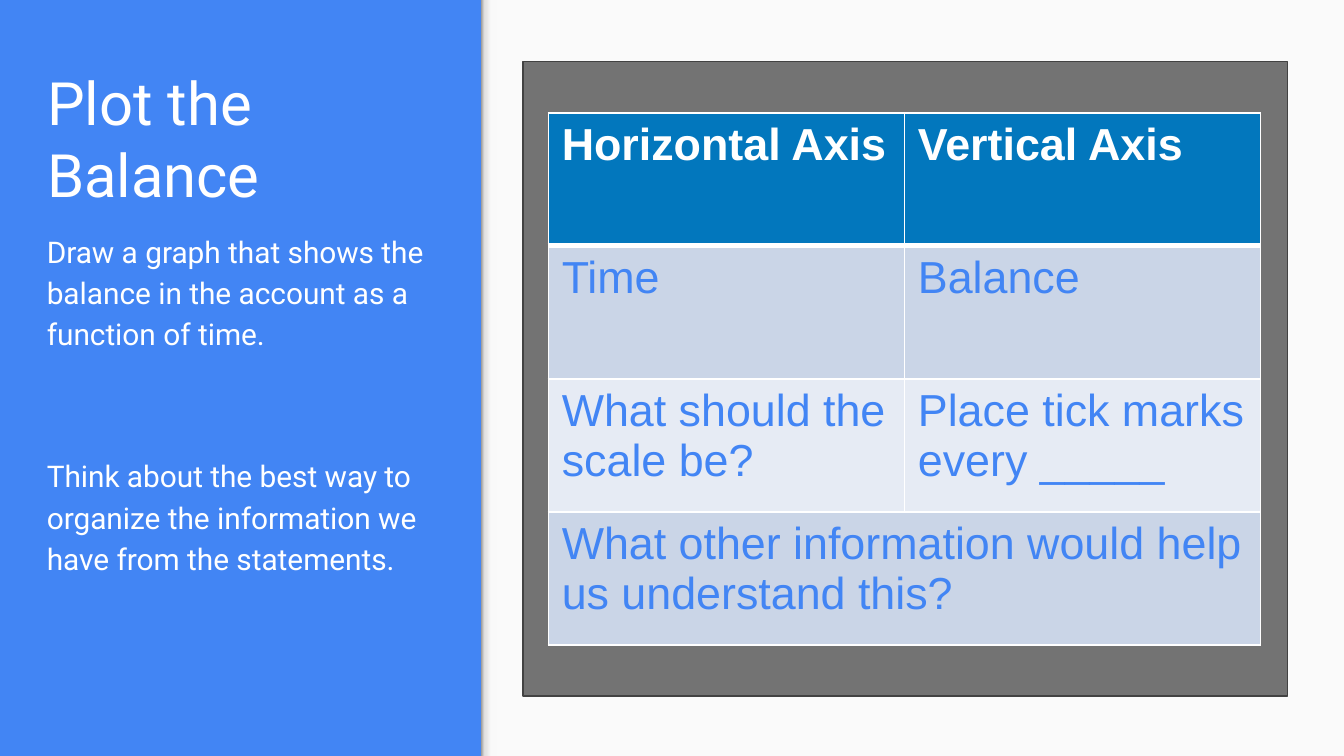
from copy import deepcopy
from lxml.etree import SubElement
from pptx import Presentation
from pptx.dml.color import RGBColor
from pptx.enum.shapes import MSO_SHAPE
from pptx.enum.text import MSO_ANCHOR, PP_ALIGN
from pptx.oxml.ns import qn
from pptx.util import Inches, Pt

WIDTH = 10
HEIGHT = WIDTH * 9 / 16
SPLIT = 3.58  # where the blue side ends
BLUE, WHITE = "4285F4", "FFFFFF"


def paint(color_format, hex_color):
    color_format.rgb = RGBColor.from_string(hex_color)


def format_text(paragraph, size, font, color, bold=False):
    paragraph.alignment = PP_ALIGN.LEFT
    for run in paragraph.runs:
        run.font.size, run.font.name, run.font.bold = Pt(size), font, bold
        paint(run.font.color, color)


deck = Presentation()
deck.slide_width, deck.slide_height = Inches(WIDTH), Inches(HEIGHT)
slide = deck.slides.add_slide(deck.slide_layouts[5])
slide.background.fill.solid()
paint(slide.background.fill.fore_color, BLUE)

# Light side, its shaded edge and the grey board
panels = []
for left, top, width, height in [
    (SPLIT, 0, WIDTH - SPLIT, HEIGHT),
    (SPLIT, 0, 0.12, HEIGHT),
    (3.89, 0.46, 5.69, 4.72),
]:
    panel = slide.shapes.add_shape(
        MSO_SHAPE.RECTANGLE, Inches(left), Inches(top), Inches(width), Inches(height))
    panel.shadow.inherit = False
    panel.line.fill.background()
    panels.append(panel)
light_side, edge, board = panels

for panel, color in [(light_side, "FAFAFA"), (board, "737373")]:
    panel.fill.solid()
    paint(panel.fill.fore_color, color)
board.line.width = Pt(0.75)
paint(board.line.color, "424242")

edge.fill.gradient()
edge.fill.gradient_angle = 0
stops = edge._element.spPr.find(".//" + qn("a:gsLst"))
stops.append(deepcopy(stops[-1]))
for stop, (position, color) in zip(
        edge.fill.gradient_stops, [(0, "999999"), (0.2, "DEDEDE"), (0.64, "F9F9F9")]):
    stop.position = position
    paint(stop.color, color)

# Title and instructions
title = slide.shapes.title
title.left, title.top, title.width, title.height = map(Inches, (0.25, 0.39, 3.26, 1.27))
instructions = slide.shapes.add_textbox(*map(Inches, (0.25, 1.6, 3.07, 3.46)))
for box, anchor in [(title, MSO_ANCHOR.BOTTOM), (instructions, MSO_ANCHOR.TOP)]:
    frame = box.text_frame
    frame.word_wrap, frame.vertical_anchor = True, anchor
    frame.margin_left = frame.margin_right = Inches(0.1)
    frame.margin_top = frame.margin_bottom = Inches(0.1)

title.text_frame.text = "Plot the Balance"
format_text(title.text_frame.paragraphs[0], 32, "Roboto", WHITE)

instructions.text_frame.text = (
    "Draw a graph that shows the balance in the account as a function of time.\n"
    "Think about the best way to organize the information we have from the statements.")
for paragraph in instructions.text_frame.paragraphs:
    format_text(paragraph, 16, "Roboto", WHITE)
    paragraph.line_spacing = 1.15
instructions.text_frame.paragraphs[1].space_before = Pt(54)

# Table of the axes
axis_rows = [
    ("0277BD", ["Horizontal Axis", "Vertical Axis"]),
    ("CAD5E7", ["Time", "Balance"]),
    ("E6EBF4", ["What should the scale be?", "Place tick marks every _____"]),
    ("CAD5E7", ["What other information would help us understand this?", ""]),
]
COLUMN, ROW = 2.65, 0.99
axes = slide.shapes.add_table(
    len(axis_rows), 2, Inches(4.08), Inches(0.84),
    Inches(2 * COLUMN), Inches(len(axis_rows) * ROW)).table
for column in axes.columns:
    column.width = Inches(COLUMN)

for r, (row_color, texts) in enumerate(axis_rows):
    axes.rows[r].height = Inches(ROW)
    for c, text in enumerate(texts):
        cell = axes.cell(r, c)
        cell.text_frame.text = text
        format_text(cell.text_frame.paragraphs[0], 24, "Arial",
                    WHITE if r == 0 else BLUE, bold=r == 0)
        # White borders, thicker under the heading row
        for side in ("lnL", "lnR", "lnT", "lnB"):
            under_heading = (r, side) in [(0, "lnB"), (1, "lnT")]
            border = SubElement(cell._tc.get_or_add_tcPr(), qn("a:" + side),
                                w=str(Pt(3 if under_heading else 1)))
            SubElement(SubElement(border, qn("a:solidFill")), qn("a:srgbClr"), val=WHITE)
        cell.fill.solid()
        paint(cell.fill.fore_color, row_color)
axes.cell(3, 0).merge(axes.cell(3, 1))

deck.save("out.pptx")
